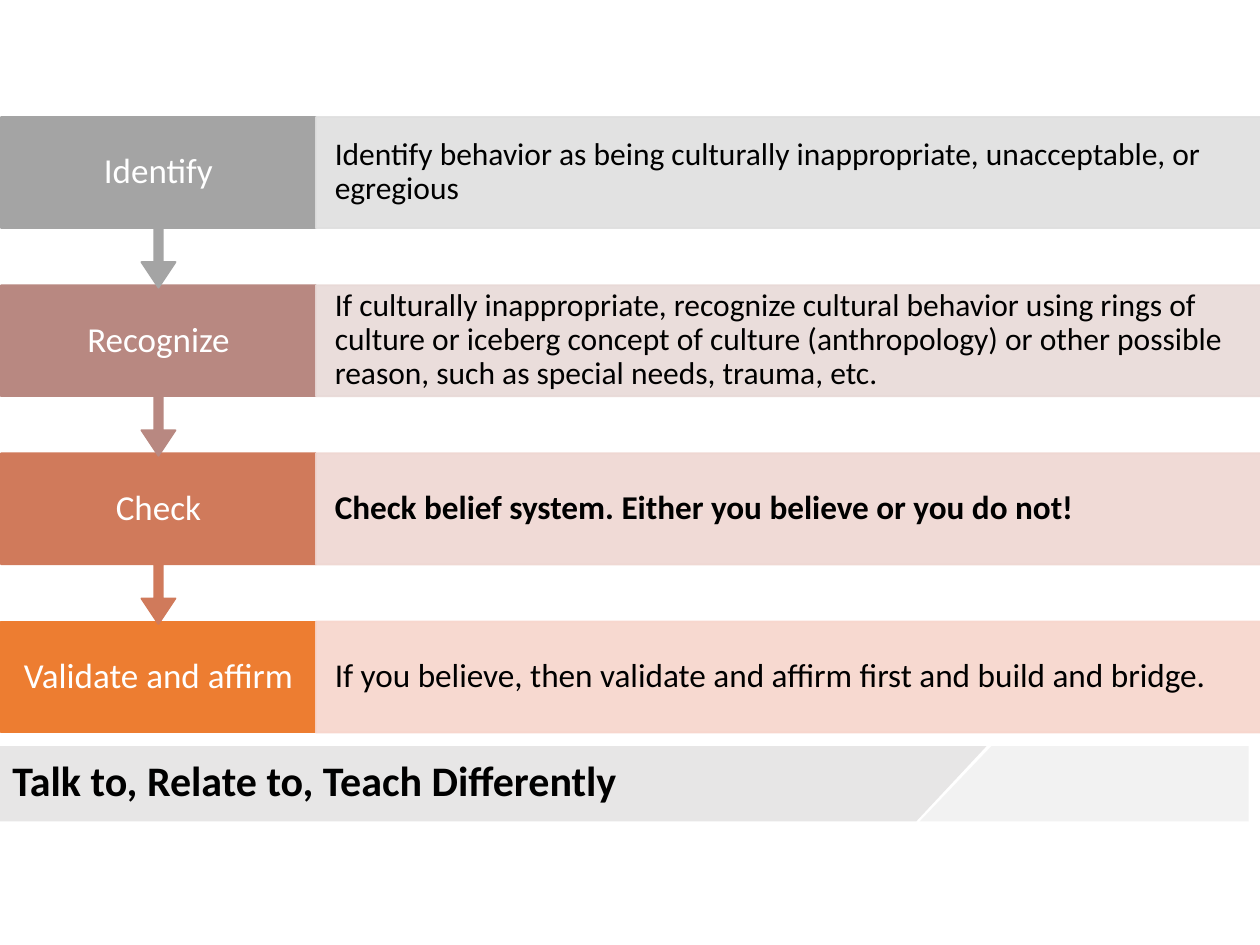
from lxml import etree
from pptx import Presentation
from pptx.dml.color import RGBColor
from pptx.enum import shapes, text
from pptx.oxml import ns
from pptx.util import Cm, Pt

BLACK = RGBColor(0x00, 0x00, 0x00)
WHITE = RGBColor(0xFF, 0xFF, 0xFF)
PALE_GREY = RGBColor(0xF2, 0xF2, 0xF2)
BAND_GREY = RGBColor(0xE7, 0xE6, 0xE6)
GREY, GREY_TINT = RGBColor(0xA4, 0xA4, 0xA4), RGBColor(0xDF, 0xDF, 0xDF)
ROSE, ROSE_TINT = RGBColor(0xB8, 0x88, 0x81), RGBColor(0xE8, 0xD9, 0xD7)
RUST, RUST_TINT = RGBColor(0xD0, 0x7A, 0x5B), RGBColor(0xEF, 0xD6, 0xD1)
ORANGE, ORANGE_TINT = RGBColor(0xED, 0x7D, 0x31), RGBColor(0xF7, 0xD5, 0xCB)


def write(sp, words, size, color=BLACK, bold=False,
          align=text.PP_ALIGN.LEFT, side=0.38):
    tf = sp.text_frame
    tf.word_wrap = True
    tf.vertical_anchor = text.MSO_ANCHOR.MIDDLE
    tf.margin_left = tf.margin_right = Cm(side)
    tf.margin_top = tf.margin_bottom = Cm(0)
    p = tf.paragraphs[0]
    p.alignment = align
    p.line_spacing = 0.9
    r = p.add_run()
    r.text = words
    r.font.name = "Calibri"
    r.font.size = Pt(size)
    r.font.bold = bold
    r.font.color.rgb = color


def paint(sp, color, alpha=None):
    sp.shadow.inherit = False
    sp.fill.solid()
    sp.fill.fore_color.rgb = color
    sp.line.color.rgb = color
    sp.line.width = Pt(1)
    if alpha:
        for clr in sp._element.spPr.iter(ns.qn("a:srgbClr")):
            etree.SubElement(clr, ns.qn("a:alpha"), val=str(alpha * 1000))


prs = Presentation()
prs.slide_width, prs.slide_height = Cm(25.4), Cm(19.05)
s = prs.slides.add_slide(prs.slide_layouts[6])

# Title band: two pieces with a slanted gap
bands = [
    (PALE_GREY, [(19.99, 15.04), (25.17, 15.04), (25.17, 16.56), (18.54, 16.56)]),
    (BAND_GREY, [(-0.02, 15.04), (19.89, 15.04), (18.47, 16.56), (-0.02, 16.56)]),
]
for color, points in bands:
    (x, y), *rest = [(Cm(a), Cm(b)) for a, b in points]
    fb = s.shapes.build_freeform(x, y)
    fb.add_line_segments(rest, close=True)
    sp = fb.convert_to_shape()
    paint(sp, color)
    sp.line.fill.background()

# Title
sp = s.shapes.add_textbox(Cm(0), Cm(14.25), Cm(25.2), Cm(3.05))
write(sp, "Talk to, Relate to, Teach Differently", 24, bold=True, side=0.25)

# Steps, last one first so that each arrow overlaps the step below
steps = [
    ("Identify", GREY, GREY_TINT, 18, False,
     "Identify behavior as being culturally inappropriate, unacceptable, or egregious"),
    ("Recognize", ROSE, ROSE_TINT, 18, False,
     "If culturally inappropriate, recognize cultural behavior using rings of culture "
     "or iceberg concept of culture (anthropology) or other possible reason, "
     "such as special needs, trauma, etc."),
    ("Check", RUST, RUST_TINT, 19, True,
     "Check belief system. Either you believe or you do not!"),
    ("Validate and affirm", ORANGE, ORANGE_TINT, 19, False,
     "If you believe, then validate and affirm first and build and bridge."),
]
LEFT, TOP, PITCH = 0.02, 2.36, 3.39
LABEL_W, DETAIL_W, BOX_H, CALLOUT_H = 6.35, 19.05, 2.24, 3.44
for i, (label, color, tint, size, bold, detail) in reversed(list(enumerate(steps))):
    y = Cm(TOP + i * PITCH)
    last = i == len(steps) - 1
    kind = shapes.MSO_SHAPE.RECTANGLE if last else shapes.MSO_SHAPE.DOWN_ARROW_CALLOUT
    sp = s.shapes.add_shape(kind, Cm(LEFT), y, Cm(LABEL_W),
                            Cm(BOX_H if last else CALLOUT_H))
    if not last:
        for n, value in enumerate((0.05, 0.1, 0.15, 0.65)):
            sp.adjustments[n] = value
    paint(sp, color)
    write(sp, label, 20, color=WHITE, align=text.PP_ALIGN.CENTER, side=0.45)

    sp = s.shapes.add_shape(shapes.MSO_SHAPE.RECTANGLE, Cm(LEFT + LABEL_W), y,
                            Cm(DETAIL_W), Cm(BOX_H))
    paint(sp, tint, alpha=89)
    write(sp, detail, size, bold=bold)

prs.save("out.pptx")
